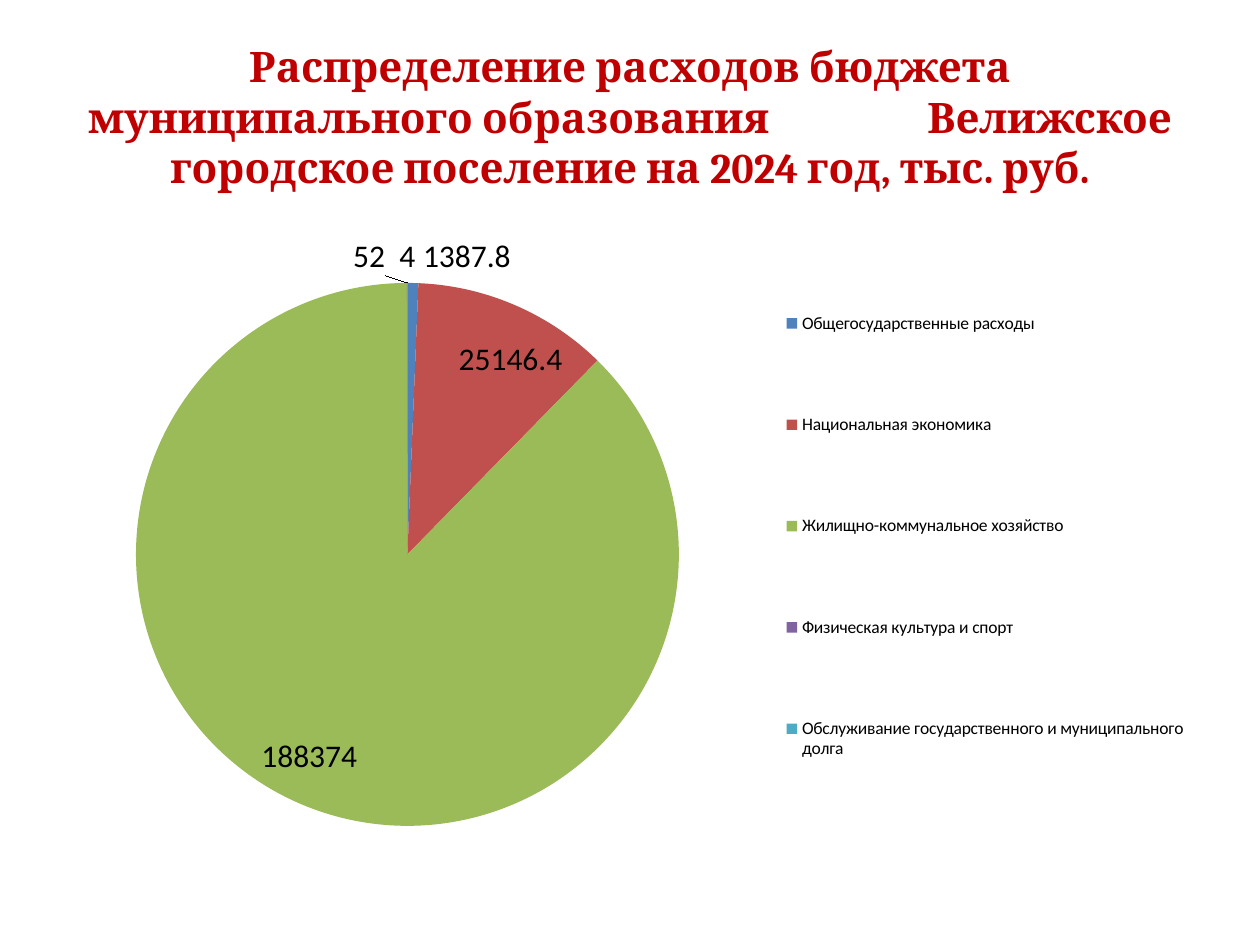
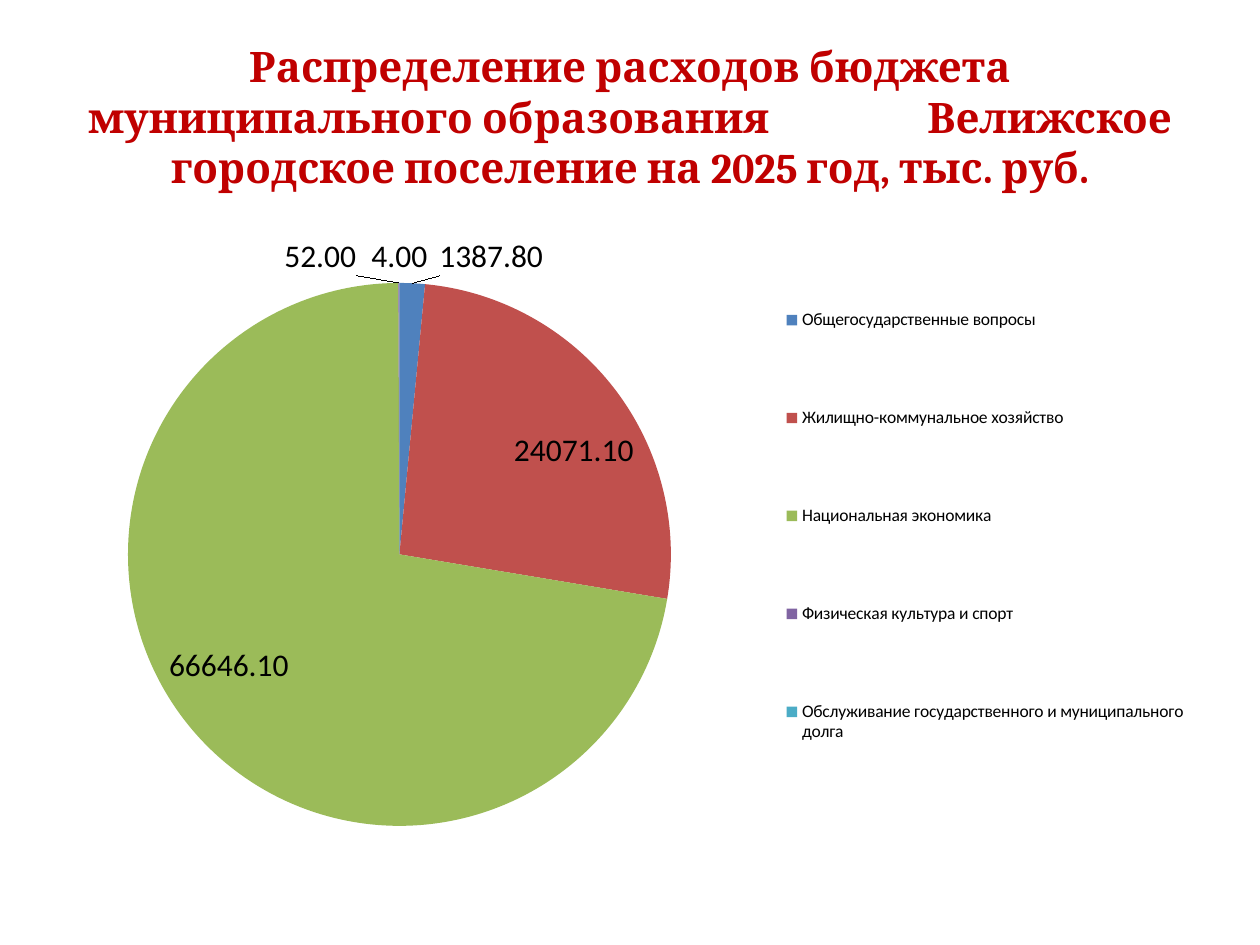
from lxml.etree import SubElement
from pptx import Presentation
from pptx.chart.data import CategoryChartData
from pptx.dml.color import RGBColor
from pptx.enum.chart import XL_CHART_TYPE, XL_LABEL_POSITION, XL_LEGEND_POSITION
from pptx.enum.text import MSO_ANCHOR, PP_ALIGN
from pptx.oxml.ns import qn
from pptx.util import Pt

TITLE_START = "Распределение расходов бюджета муниципального образования"
TITLE_END = "Велижское городское поселение на {} год, тыс. руб."
GENERAL = 1387.8
SPORT = ("Физическая культура и спорт", 52)
DEBT = ("Обслуживание государственного и муниципального долга", 4)

BUDGETS = [
    {
        "year": 2024,
        "expenses": [
            ("Общегосударственные расходы", GENERAL),
            ("Национальная экономика", 25146.4),
            ("Жилищно-коммунальное хозяйство", 188374),
            SPORT,
            DEBT,
        ],
        "format": "General",
        "pie_left": 136,
        "legend_height": 608,
    },
    {
        "year": 2025,
        "expenses": [
            ("Общегосударственные вопросы", GENERAL),
            ("Жилищно-коммунальное хозяйство", 24071.1),
            ("Национальная экономика", 66646.1),
            SPORT,
            DEBT,
        ],
        "format": "0.00",
        "pie_left": 128,
        "legend_height": 588,
    },
]

RED = RGBColor(0xC0, 0x00, 0x00)
BLACK = RGBColor(0x00, 0x00, 0x00)
SLICES = [
    RGBColor(0x4F, 0x81, 0xBD),
    RGBColor(0xC0, 0x50, 0x4D),
    RGBColor(0x9B, 0xBB, 0x59),
    RGBColor(0x80, 0x64, 0xA2),
    RGBColor(0x4B, 0xAC, 0xC6),
]

PX = 914400 // 126
SLIDE_SIZE = (1260, 945)
TITLE_BOX = (63, 38, 1134, 157)
CHART_BOX = (63, 220, 1134, 624)
PIE_TOP, PIE_SIZE = 283, 543
LEGEND_LEFT, LEGEND_TOP, LEGEND_WIDTH = 779, 232, 412
TITLE_GAP = 8500


def emu(box):
    return [v * PX for v in box]


def add_title(slide, year):
    tf = slide.shapes.add_textbox(*emu(TITLE_BOX)).text_frame
    tf.word_wrap = True
    tf.vertical_anchor = MSO_ANCHOR.MIDDLE
    p = tf.paragraphs[0]
    p.alignment = PP_ALIGN.CENTER
    p.font.name = "Cambria"
    p.font.size = Pt(24)
    p.font.bold = True
    p.font.color.rgb = RED
    for text in (TITLE_START, " ", TITLE_END.format(year)):
        r = p.add_run()
        r.text = text
        if text == " ":
            r.font._element.set("spc", str(TITLE_GAP))


def set_layout(part, box, inner=False):
    layout = part.find(qn("c:layout"))
    if layout is None:
        layout = SubElement(part, qn("c:layout"))
        anchor = part.find(qn("c:legendPos"))
        if anchor is None:
            part.insert(0, layout)
        else:
            anchor.addnext(layout)
    manual = SubElement(layout, qn("c:manualLayout"))
    left, top, width, height = CHART_BOX
    x, y, w, h = box
    values = [("xMode", "edge"), ("yMode", "edge"),
              ("x", (x - left) / width), ("y", (y - top) / height),
              ("w", w / width), ("h", h / height)]
    if inner:
        values.insert(0, ("layoutTarget", "inner"))
    for tag, value in values:
        SubElement(manual, qn(f"c:{tag}")).set("val", str(value))


def add_pie(slide, budget):
    data = CategoryChartData(number_format=budget["format"])
    names, amounts = zip(*budget["expenses"])
    data.categories = names
    data.add_series("Series 1", amounts)
    chart = slide.shapes.add_chart(XL_CHART_TYPE.PIE, *emu(CHART_BOX), data).chart
    chart.has_title = False
    chart.font.name = "Calibri"
    chart.font.size = Pt(18)
    chart.font.color.rgb = BLACK

    plot = chart.plots[0]
    plot.vary_by_categories = True
    for i, color in enumerate(SLICES):
        fill = plot.series[0].points[i].format.fill
        fill.solid()
        fill.fore_color.rgb = color
    plot.has_data_labels = True
    labels = plot.data_labels
    labels.show_value = True
    labels.show_percentage = False
    labels.number_format = budget["format"]
    labels.number_format_is_linked = False
    labels.position = XL_LABEL_POSITION.BEST_FIT

    chart.has_legend = True
    legend = chart.legend
    legend.position = XL_LEGEND_POSITION.RIGHT
    legend.include_in_layout = False
    legend.font.size = Pt(10)
    set_layout(legend._element,
               (LEGEND_LEFT, LEGEND_TOP, LEGEND_WIDTH, budget["legend_height"]))
    set_layout(chart._chartSpace.chart.plotArea,
               (budget["pie_left"], PIE_TOP, PIE_SIZE, PIE_SIZE), inner=True)


def main():
    prs = Presentation()
    prs.slide_width, prs.slide_height = emu(SLIDE_SIZE)
    for budget in BUDGETS:
        s = prs.slides.add_slide(prs.slide_layouts[6])
        add_title(s, budget["year"])
        add_pie(s, budget)
    prs.save("out.pptx")


if __name__ == "__main__":
    main()
